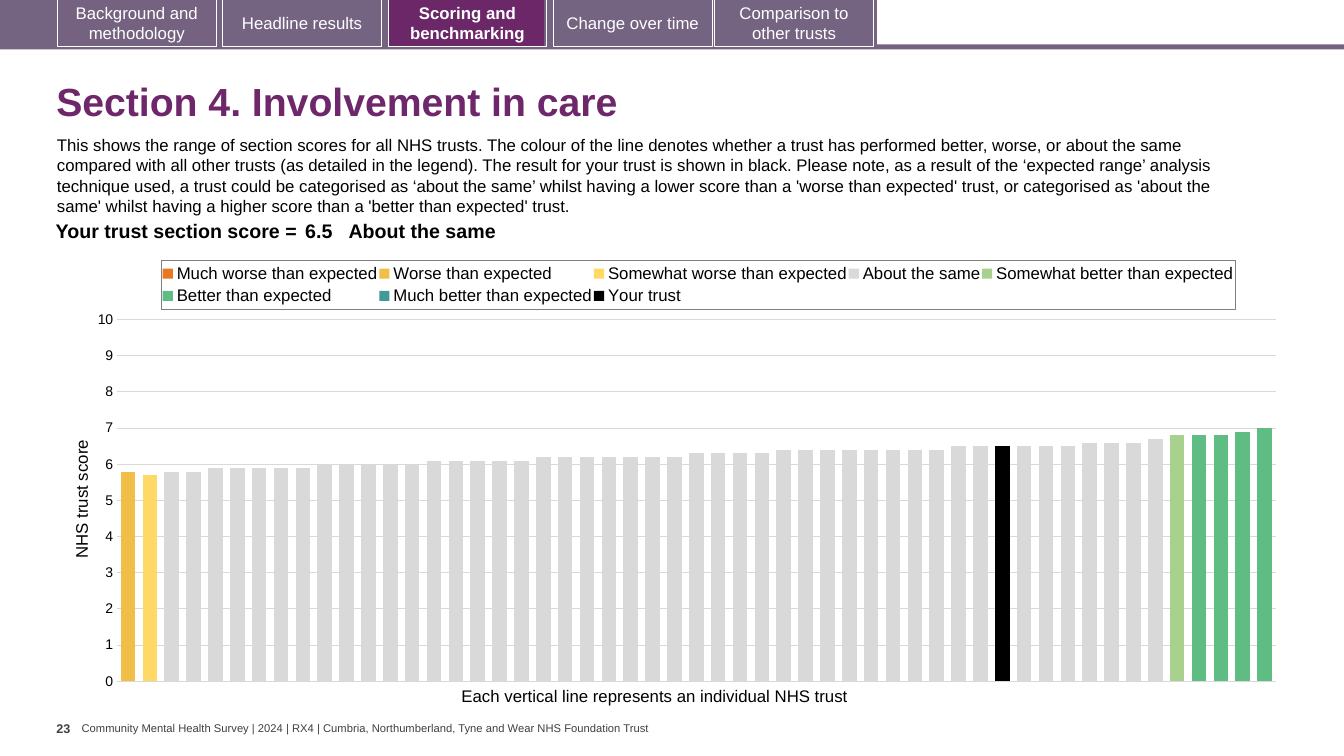
from copy import deepcopy
from typing import Any, NamedTuple, Optional
from pptx import Presentation, util as u
from pptx.chart import data
from pptx.dml import color as dml
from pptx.enum import chart as ch, shapes, text
from pptx.oxml import ns, parse_xml

UNIT = u.Inches(1 / 12)
COLS, ROWS, BARS = 160, 90, 53
HUES = {
    "strip": "756382", "tab": "746280", "live": "6B2768", "title": "6D276A",
    "white": "FFFFFF", "black": "000000", "grey": "404040", "grid": "D9D9D9",
    "frame": "7F7F7F", "much worse": "E87722", "worse": "F1BE48",
    "some worse": "FFD966", "same": "D9D9D9", "some better": "A9D18E",
    "better": "5FBD83", "much better": "419999",
}


class Box(NamedTuple):
    col: float
    row: float
    wide: float
    high: float


class Tab(NamedTuple):
    label: str
    col: float
    fill: Optional[str] = None
    bold: bool = False


class Note(NamedTuple):
    words: str
    box: Box
    size: float
    hue: str = "black"
    bold: bool = False
    wrap: bool = False
    mid: bool = False
    pads: Optional[tuple[float, float]] = None
    lead: Optional[float] = None


class Group(NamedTuple):
    name: str
    hue: str
    start: int = 0
    runs: tuple[tuple[float, int], ...] = ()


PLATES = [(Box(0, 5.28, COLS, 0.6), "strip"), (Box(0, 0, 104.4, 5.64), "strip"),
          (Box(46.32, 0, 18.48, 5.52), "live")]
TABS = [
    Tab("Background and methodology", 6.84, "tab"),
    Tab("Headline results", 26.52),
    Tab("Scoring and benchmarking", 46.2, bold=True),
    Tab("Change over time", 65.88, "strip"),
    Tab("Comparison to other trusts", 85.08, "strip"),
]
NOTES = [
    Note("Community Mental Health Survey | 2024 | RX4 | Cumbria, Northumberland, "
         "Tyne and Wear NHS Foundation Trust",
         Box(9.72, 85.92, 68.52, 1.56), 8, "grey", mid=True, pads=(0, 0)),
    Note("Section 4. Involvement in care", Box(5.52, 8.04, 149.88, 8.64), 28,
         "title", bold=True, wrap=True, mid=True, lead=0.9),
    Note("23", Box(6.72, 85.2, 3, 4.8), 9, "grey", bold=True, pads=(0, 0.6)),
    Note("This shows the range of section scores for all NHS trusts. The colour of the line "
         "denotes whether a trust has performed better, worse, or about the same compared with "
         "all other trusts (as detailed in the legend). The result for your trust is shown in "
         "black. Please note, as a result of the ‘expected range’ analysis technique used, a "
         "trust could be categorised as ‘about the same’ whilst having a lower score than a "
         "'worse than expected' trust, or categorised as 'about the same' whilst having a "
         "higher score than a 'better than expected' trust.",
         Box(5.6, 15.48, 145.56, 10.92), 12, wrap=True),
    Note("Each vertical line represents an individual NHS trust",
         Box(53.76, 81, 49.32, 3.6), 12),
]
GROUPS = [
    Group("Much worse than expected", "much worse"),
    Group("Worse than expected", "worse", 0, ((5.8, 1),)),
    Group("Somewhat worse than expected", "some worse", 1, ((5.7, 1),)),
    Group("About the same", "same", 2, ((5.8, 2), (5.9, 5), (6, 5), (6.1, 5), (6.2, 7),
                                        (6.3, 4), (6.4, 8), (6.5, 6), (6.6, 3), (6.7, 1))),
    Group("Somewhat better than expected", "some better", 48, ((6.8, 1),)),
    Group("Better than expected", "better", 49, ((6.8, 2), (6.9, 1), (7, 1))),
    Group("Much better than expected", "much better"),
    Group("Your trust", "black", 40, ((6.5, 1),)),
]
SCORE = [("Your trust section score =", 31.56, 0.48), ("6.5", 5.64, 0.48),
         ("About the same", 103.08, 0)]


def grid(n: float) -> int:
    return round(n * UNIT)


def style(font: Any, size: float, hue: str = "black", bold: bool = False) -> None:
    font.name, font.size, font.bold = "Arial", u.Pt(size), bold
    font.color.rgb = dml.RGBColor.from_string(HUES[hue])


def write(para: Any, words: str, size: float, hue: str = "black", bold: bool = False) -> None:
    run = para.add_run()
    run.text = words
    style(run.font, size, hue, bold)


def paint(fill: Any, hue: Optional[str]) -> None:
    if hue:
        fill.solid()
        fill.fore_color.rgb = dml.RGBColor.from_string(HUES[hue])
    else:
        fill.background()


def plate(slide: Any, box: Box, hue: Optional[str], edge: Optional[str] = None) -> Any:
    shape = slide.shapes.add_shape(shapes.MSO_SHAPE.RECTANGLE, *map(grid, box))
    shape.shadow.inherit = False
    paint(shape.fill, hue)
    paint(shape.line.fill, edge)
    return shape


def draw_tab(slide: Any, tab: Tab) -> None:
    shape = plate(slide, Box(tab.col, -0.12, 18.9, 5.64), tab.fill, "white")
    shape.line.width = u.Pt(0.75)
    shape.text_frame.word_wrap = True
    shape.text_frame.vertical_anchor = text.MSO_ANCHOR.MIDDLE
    para = shape.text_frame.paragraphs[0]
    para.alignment = text.PP_ALIGN.CENTER
    write(para, tab.label, 12, "white", tab.bold)


def draw_note(slide: Any, note: Note) -> None:
    frame = slide.shapes.add_textbox(*map(grid, note.box)).text_frame
    frame.word_wrap = note.wrap
    frame.vertical_anchor = text.MSO_ANCHOR.MIDDLE if note.mid else text.MSO_ANCHOR.TOP
    if note.pads:
        frame.margin_left = frame.margin_right = grid(note.pads[0])
        frame.margin_top = frame.margin_bottom = grid(note.pads[1])
    para = frame.paragraphs[0]
    para.line_spacing = note.lead
    write(para, note.words, note.size, note.hue, note.bold)


def pin(node: Any, prior: Optional[str], **share: float) -> None:
    for old in node.findall(ns.qn("c:layout")):
        node.remove(old)
    inner = "" if prior else '<c:layoutTarget val="inner"/>'
    sides = "".join(f'<c:{key} val="{val / 100:.3f}"/>' for key, val in share.items())
    layout = parse_xml(f'<c:layout {ns.nsdecls("c")}><c:manualLayout>{inner}<c:xMode val="edge"/>'
                       f'<c:yMode val="edge"/>{sides}</c:manualLayout></c:layout>')
    node.insert(node.index(node.find(ns.qn(prior))) + 1 if prior else 0, layout)


def split(area: Any) -> None:
    bars, cat, val = (area.find(ns.qn(f"c:{tag}")) for tag in ("barChart", "catAx", "valAx"))
    twins = [deepcopy(node) for node in (bars, val, cat)]
    bars.remove(bars.findall(ns.qn("c:ser"))[-1])
    for old in twins[0].findall(ns.qn("c:ser"))[:-1]:
        twins[0].remove(old)
    for tag in ("c:majorGridlines", "c:title"):
        twins[1].remove(twins[1].find(ns.qn(tag)))
    for tag, state in (("axPos", "r"), ("majorTickMark", "out"), ("tickLblPos", "none"),
                       ("crosses", "max")):
        twins[1].find(ns.qn(f"c:{tag}")).set("val", state)
    fresh = {cat.find(ns.qn("c:axId")).get("val"): "501", val.find(ns.qn("c:axId")).get("val"): "502"}
    for node in twins:
        for link in node.findall(ns.qn("c:axId")) + node.findall(ns.qn("c:crossAx")):
            link.set("val", fresh[link.get("val")])
    bars.addnext(twins[0])
    val.addnext(twins[1])
    twins[1].addnext(twins[2])


def draw_chart(slide: Any, box: Box) -> None:
    feed = data.CategoryChartData(number_format="0.0")
    feed.categories = [str(n + 1) for n in range(BARS)]
    for group in GROUPS:
        vals = [None] * group.start + [score for score, count in group.runs for _ in range(count)]
        feed.add_series(group.name, vals + [None] * (BARS - len(vals)))
    kind = ch.XL_CHART_TYPE.COLUMN_CLUSTERED
    chart = slide.shapes.add_chart(kind, *map(grid, box), feed).chart
    style(chart.font, 10)
    chart.has_title, chart.has_legend = False, True
    plot, axis, key = chart.plots[0], chart.value_axis, chart.legend
    plot.gap_width, plot.overlap, plot.vary_by_categories = 50, 100, False
    for bars, group in zip(plot.series, GROUPS):
        paint(bars.format.fill, group.hue)
    chart.category_axis.visible = False
    axis.minimum_scale, axis.maximum_scale, axis.major_unit = 0, 10, 1
    axis.major_tick_mark = ch.XL_TICK_MARK.NONE
    paint(axis.format.line.fill, None)
    paint(axis.major_gridlines.format.line.fill, "grid")
    axis.major_gridlines.format.line.width = u.Pt(0.75)
    axis.tick_labels.number_format, axis.tick_labels.number_format_is_linked = "0", False
    style(axis.tick_labels.font, 10)
    write(axis.axis_title.text_frame.paragraphs[0], "NHS trust score", 12)
    pin(axis.axis_title._element, "c:tx", x=0, y=42)
    key.position, key.include_in_layout = ch.XL_LEGEND_POSITION.TOP, False
    style(key.font, 12)
    pin(key._element, "c:legendPos", x=7.65, y=2.5, w=87.7, h=11)
    key._element.find(ns.qn("c:overlay")).addnext(parse_xml(
        f'<c:spPr {ns.nsdecls("c", "a")}><a:ln w="9525"><a:solidFill>'
        f'<a:srgbClr val="{HUES["frame"]}"/></a:solidFill></a:ln></c:spPr>'))
    area = chart._chartSpace.chart.plotArea
    pin(area, None, x=4, y=15.8, w=94.6, h=80.8)
    crosses = axis._element.find(ns.qn("c:crosses"))
    if crosses is not None:
        split(area)


def draw_score(slide: Any, box: Box) -> None:
    table = slide.shapes.add_table(1, len(SCORE), *map(grid, box)).table
    table.first_row = table.horz_banding = False
    for n, (words, wide, pad) in enumerate(SCORE):
        table.columns[n].width = grid(wide)
        cell = table.cell(0, n)
        paint(cell.fill, None)
        cell.margin_left = cell.margin_right = grid(pad)
        cell.margin_top = cell.margin_bottom = grid(0.48)
        para = cell.text_frame.paragraphs[0]
        para.alignment = text.PP_ALIGN.LEFT if n else text.PP_ALIGN.RIGHT
        write(para, words, 14, bold=True)


def main() -> None:
    deck = Presentation()
    deck.slide_width, deck.slide_height = grid(COLS), grid(ROWS)
    slide = deck.slides.add_slide(deck.slide_layouts[6])
    for box, fill in PLATES:
        plate(slide, box, fill)
    for tab in TABS:
        draw_tab(slide, tab)
    for note in NOTES:
        draw_note(slide, note)
    draw_chart(slide, Box(8.1, 29.64, 145.8, 53.28))
    draw_score(slide, Box(4.3, 25.8, 140.28, 2.64))
    deck.save("out.pptx")


if __name__ == "__main__":
    main()
